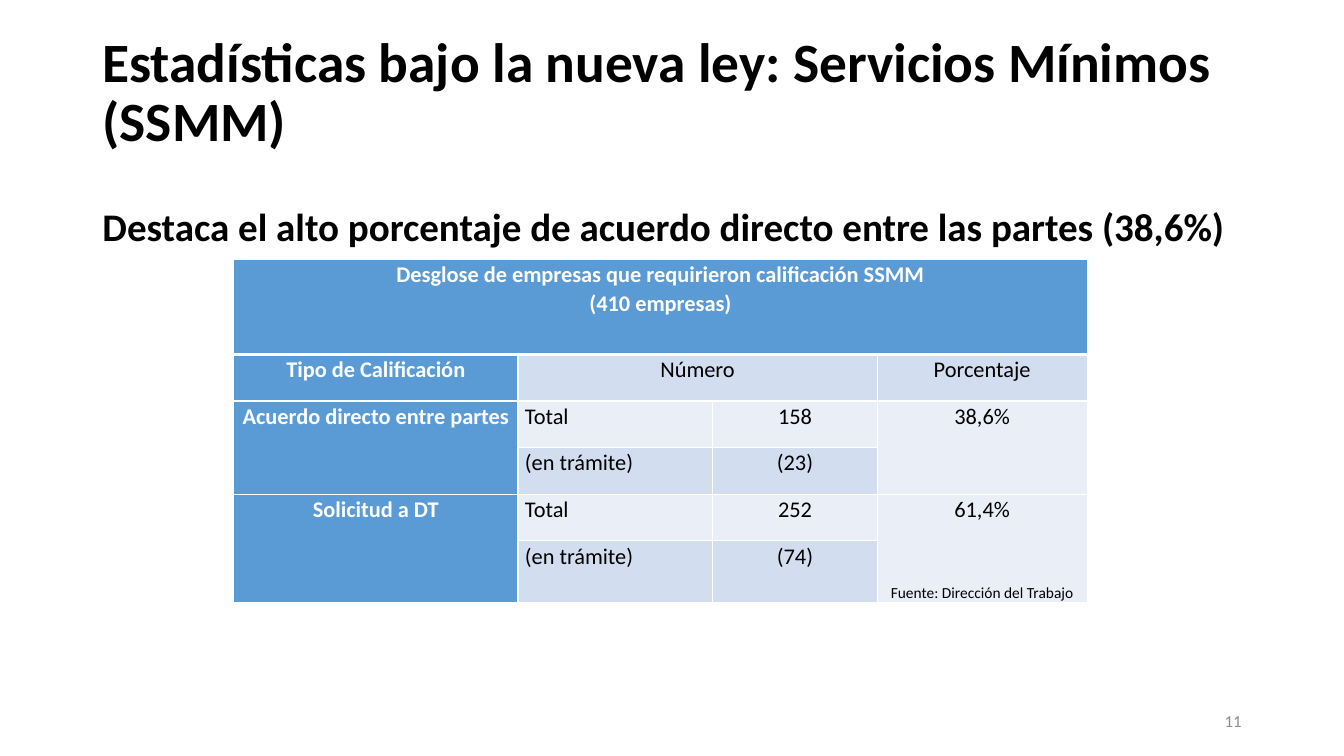
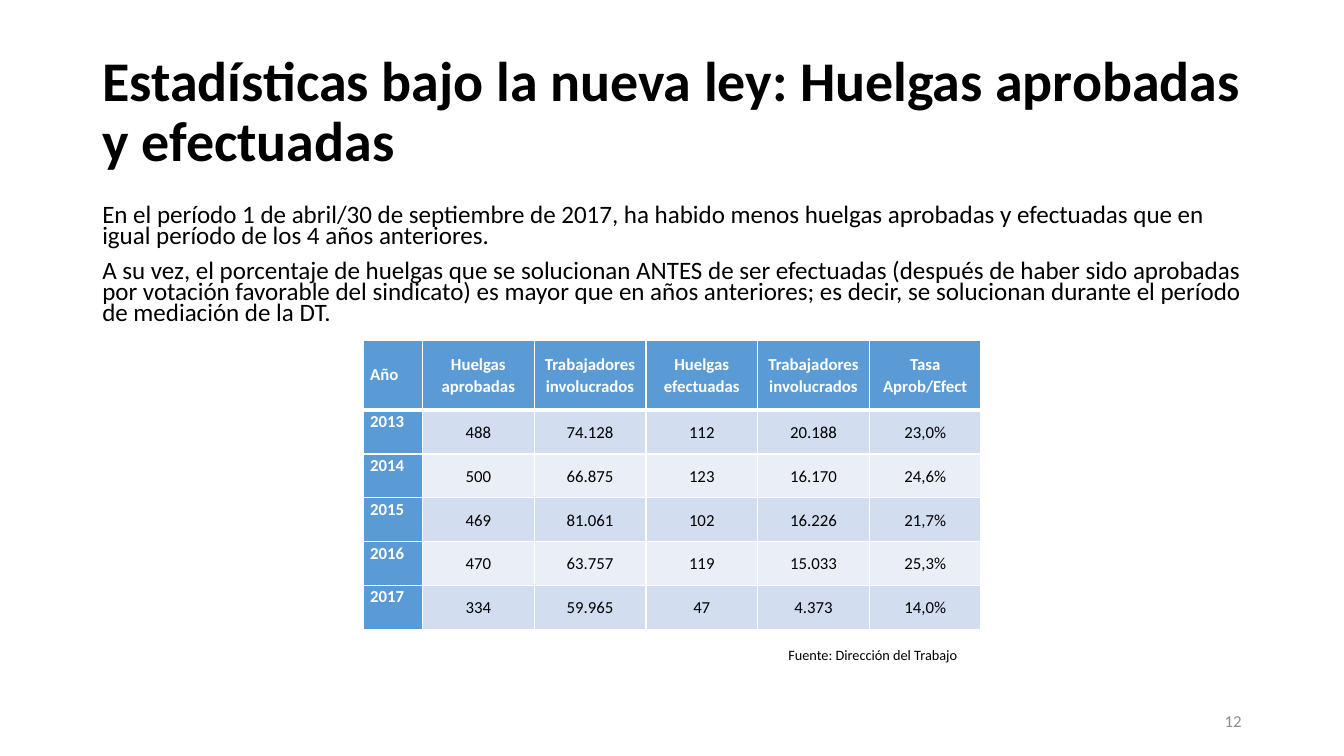
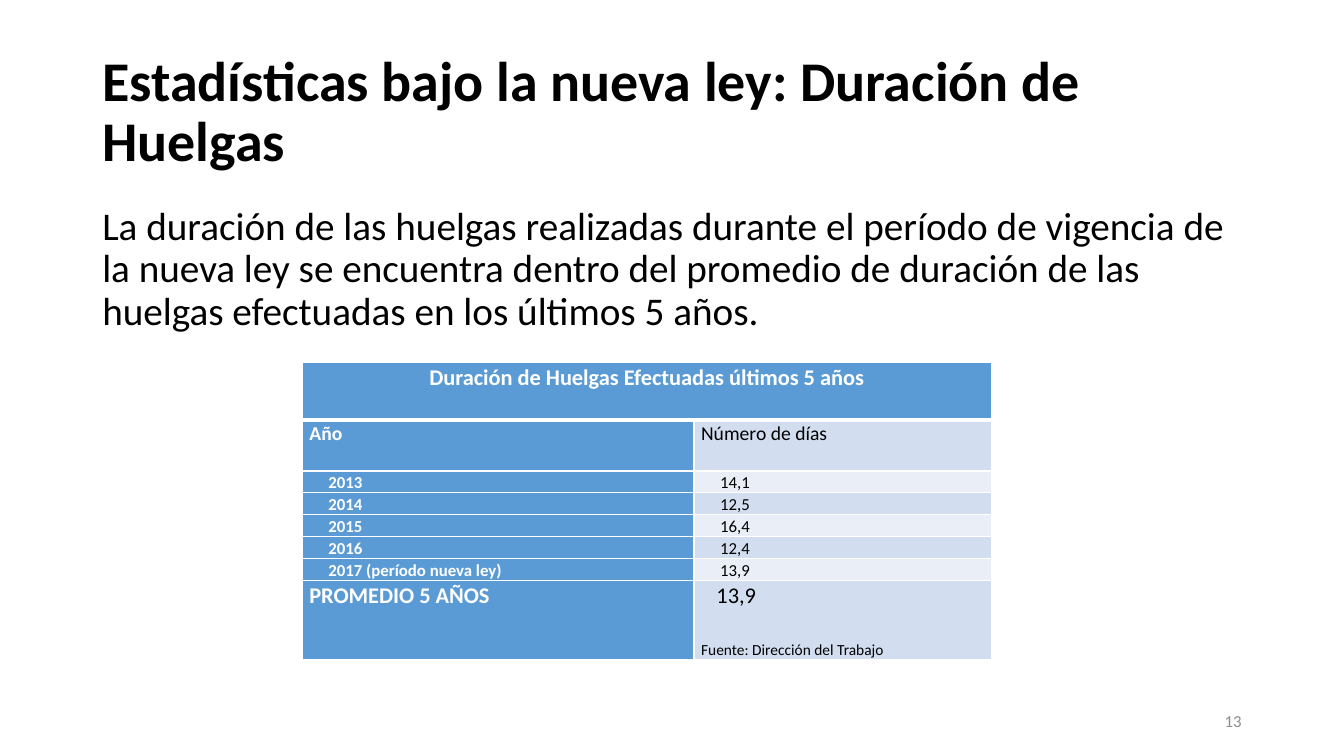
from lxml import etree
from pptx import Presentation
from pptx.dml.color import RGBColor
from pptx.enum import text
from pptx.oxml import ns
from pptx.util import Pt

FONT = "Calibri"
BLACK = RGBColor(0x00, 0x00, 0x00)
WHITE = RGBColor(0xFF, 0xFF, 0xFF)
GREY = RGBColor(0x8C, 0x8C, 0x8C)
BLUE = RGBColor(0x5B, 0x9B, 0xD5)
BANDS = (RGBColor(0xEA, 0xEF, 0xF7), RGBColor(0xD2, 0xDE, 0xEF))

LEFT, CENTER, RIGHT = text.PP_ALIGN.LEFT, text.PP_ALIGN.CENTER, text.PP_ALIGN.RIGHT
TOP, MIDDLE = text.MSO_ANCHOR.TOP, text.MSO_ANCHOR.MIDDLE

MARGIN, CONTENT_WIDTH = 66, 828
SOURCE = "Fuente: Dirección del Trabajo"
TITLE_START = "Estadísticas bajo la nueva ley: "


def style(paragraph, size, color=BLACK, bold=False, align=LEFT, spacing=1.0, before=0):
    paragraph.alignment = align
    paragraph.line_spacing = spacing
    paragraph.space_before = Pt(before)
    for run in paragraph.runs:
        run.font.name = FONT
        run.font.size = Pt(size)
        run.font.bold = bold
        run.font.color.rgb = color


def place(shape, left, top, width, height):
    shape.left, shape.top = Pt(left), Pt(top)
    shape.width, shape.height = Pt(width), Pt(height)


def add_text(slide, box, words, size, anchor=TOP, **look):
    frame = slide.shapes.add_textbox(*map(Pt, box)).text_frame
    frame.word_wrap = True
    frame.vertical_anchor = anchor
    frame.text = words
    for paragraph in frame.paragraphs:
        style(paragraph, size, **look)


def add_page(deck, topic, number, title_height=104.4, title_size=40):
    slide = deck.slides.add_slide(deck.slide_layouts[5])
    title = slide.shapes.title
    place(title, MARGIN, 28.8, CONTENT_WIDTH, title_height)
    frame = title.text_frame
    frame.auto_size = text.MSO_AUTO_SIZE.NONE
    frame.vertical_anchor = MIDDLE
    frame.text = TITLE_START + topic
    style(frame.paragraphs[0], title_size, bold=True, spacing=0.9)
    add_text(slide, (678, 500.5, 216, 28.8), str(number), 12, MIDDLE,
             color=GREY, align=RIGHT)
    return slide


def add_body(slide, words, size, spacing):
    add_text(slide, (MARGIN, 144, CONTENT_WIDTH, 98), words, size,
             spacing=spacing, before=10)


def set_borders(cell, row):
    properties = cell._tc.get_or_add_tcPr()
    thick = {0: "lnB", 1: "lnT"}.get(row)
    for side in ("lnL", "lnR", "lnT", "lnB"):
        width = Pt(3 if side == thick else 1)
        line = etree.SubElement(properties, ns.qn("a:" + side), w=str(width))
        fill = etree.SubElement(line, ns.qn("a:solidFill"))
        etree.SubElement(fill, ns.qn("a:srgbClr"), val=str(WHITE))


def add_grid(slide, left, top, columns, heights, rows, sizes, merges=()):
    table = slide.shapes.add_table(
        len(rows), len(columns), Pt(left), Pt(top),
        Pt(sum(width for width, _, _ in columns)), Pt(sum(heights))).table
    table.horz_banding = False
    for row, height in zip(table.rows, heights):
        row.height = Pt(height)
    for column, (width, _, _) in zip(table.columns, columns):
        column.width = Pt(width)
    for r, values in enumerate(rows):
        for c, (value, (_, align, anchor)) in enumerate(zip(values, columns)):
            cell = table.cell(r, c)
            heading = r == 0 or c == 0
            set_borders(cell, r)
            cell.fill.solid()
            cell.fill.fore_color.rgb = BLUE if heading else BANDS[r % 2]
            cell.margin_left = cell.margin_right = Pt(5)
            cell.margin_top = cell.margin_bottom = 0
            cell.vertical_anchor = anchor
            cell.text_frame.text = value
            for paragraph in cell.text_frame.paragraphs:
                style(paragraph, sizes[r], WHITE if heading else BLACK,
                      heading, align, 1.07)
    for first, last in merges:
        table.cell(*first).merge(table.cell(*last))
    return table


def add_source(cell, align, gap):
    paragraph = cell.text_frame.add_paragraph()
    paragraph.text = SOURCE
    style(paragraph, 11, align=align, spacing=1.07, before=gap)


def indent(cell, distance):
    properties = cell.text_frame.paragraphs[0]._p.get_or_add_pPr()
    properties.set("marL", str(Pt(distance)))
    properties.set("indent", "0")


def add_minimum_services(deck):
    slide = add_page(deck, "Servicios Mínimos (SSMM)", 11, 145.4, 39.6)
    highlight = slide.shapes.title.text_frame.add_paragraph()
    highlight.text = "Destaca el alto porcentaje de acuerdo directo entre las partes (38,6%)"
    style(highlight, 27.9, bold=True, spacing=0.9, before=38.5)
    columns = [(203, CENTER, TOP), (139.2, LEFT, TOP),
               (117.4, CENTER, TOP), (150, CENTER, TOP)]
    rows = [
        ("Desglose de empresas que requirieron calificación SSMM\n(410 empresas)", "", "", ""),
        ("Tipo de Calificación", "Número", "", "Porcentaje"),
        ("Acuerdo directo entre partes", "Total", "158", "38,6%"),
        ("", "(en trámite)", "(23)", ""),
        ("Solicitud a DT", "Total", "252", "61,4%"),
        ("", "(en trámite)", "(74)", ""),
    ]
    merges = [((0, 0), (0, 3)), ((1, 1), (1, 2))]
    merges += [((r, c), (r + 1, c)) for r in (2, 4) for c in (0, 3)]
    table = add_grid(slide, 167, 185, columns, [68.2] + [33.3] * 4 + [43.9],
                     rows, [16] * 6, merges)
    table.cell(1, 1).text_frame.paragraphs[0].alignment = CENTER
    add_source(table.cell(4, 3), CENTER, 41.8)


def add_strikes(deck):
    slide = add_page(deck, "Huelgas aprobadas y efectuadas", 12)
    add_body(slide,
             "En el período 1 de abril/30 de septiembre de 2017, ha habido menos huelgas "
             "aprobadas y efectuadas que en igual período de los 4 años anteriores.\n"
             "A su vez, el porcentaje de huelgas que se solucionan ANTES de ser efectuadas "
             "(después de haber sido aprobadas por votación favorable del sindicato) es mayor "
             "que en años anteriores; es decir, se solucionan durante el período de mediación "
             "de la DT.", 17.9, 0.7)
    rows = [
        ("Año", "Huelgas aprobadas", "Trabajadores involucrados", "Huelgas efectuadas",
         "Trabajadores involucrados", "Tasa Aprob/Efect"),
        ("2013", "488", "74.128", "112", "20.188", "23,0%"),
        ("2014", "500", "66.875", "123", "16.170", "24,6%"),
        ("2015", "469", "81.061", "102", "16.226", "21,7%"),
        ("2016", "470", "63.757", "119", "15.033", "25,3%"),
        ("2017", "334", "59.965", "47", "4.373", "14,0%"),
    ]
    columns = [(42.4, LEFT, TOP)] + [(79.8, CENTER, MIDDLE)] * 5
    table = add_grid(slide, 259.4, 243.4, columns, [49.6] + [31.3] * 5, rows, [12] * 6)
    table.cell(0, 0).margin_top = Pt(15.7)
    add_text(slide, (556, 458, 140, 20), SOURCE, 10.2)


def add_duration(deck):
    slide = add_page(deck, "Duración de Huelgas", 13)
    add_body(slide,
             "La duración de las huelgas realizadas durante el período de vigencia de la nueva "
             "ley se encuentra dentro del promedio de duración de las huelgas efectuadas en los "
             "últimos 5 años.", 28, 0.9)
    rows = [
        ("Duración de Huelgas Efectuadas últimos 5 años", ""),
        ("Año", "Número de días"),
        ("2013", "14,1"),
        ("2014", "12,5"),
        ("2015", "16,4"),
        ("2016", "12,4"),
        ("2017 (período nueva ley)", "13,9"),
        ("PROMEDIO 5 AÑOS", "13,9"),
    ]
    columns = [(279.8, LEFT, TOP), (212.4, LEFT, TOP)]
    table = add_grid(slide, 216, 258.8, columns, [41.2, 36.4] + [15.7] * 5 + [56.2],
                     rows, [16, 14] + [12] * 5 + [16], [((0, 0), (0, 1))])
    table.cell(0, 0).text_frame.paragraphs[0].alignment = CENTER
    for r in range(2, 7):
        for c in range(2):
            indent(table.cell(r, c), 13.6)
    average = table.cell(7, 1)
    indent(average, 11)
    add_source(average, LEFT, 20.9)


def main():
    deck = Presentation()
    deck.slide_width, deck.slide_height = Pt(960), Pt(540)
    add_minimum_services(deck)
    add_strikes(deck)
    add_duration(deck)
    deck.save("out.pptx")


if __name__ == "__main__":
    main()
